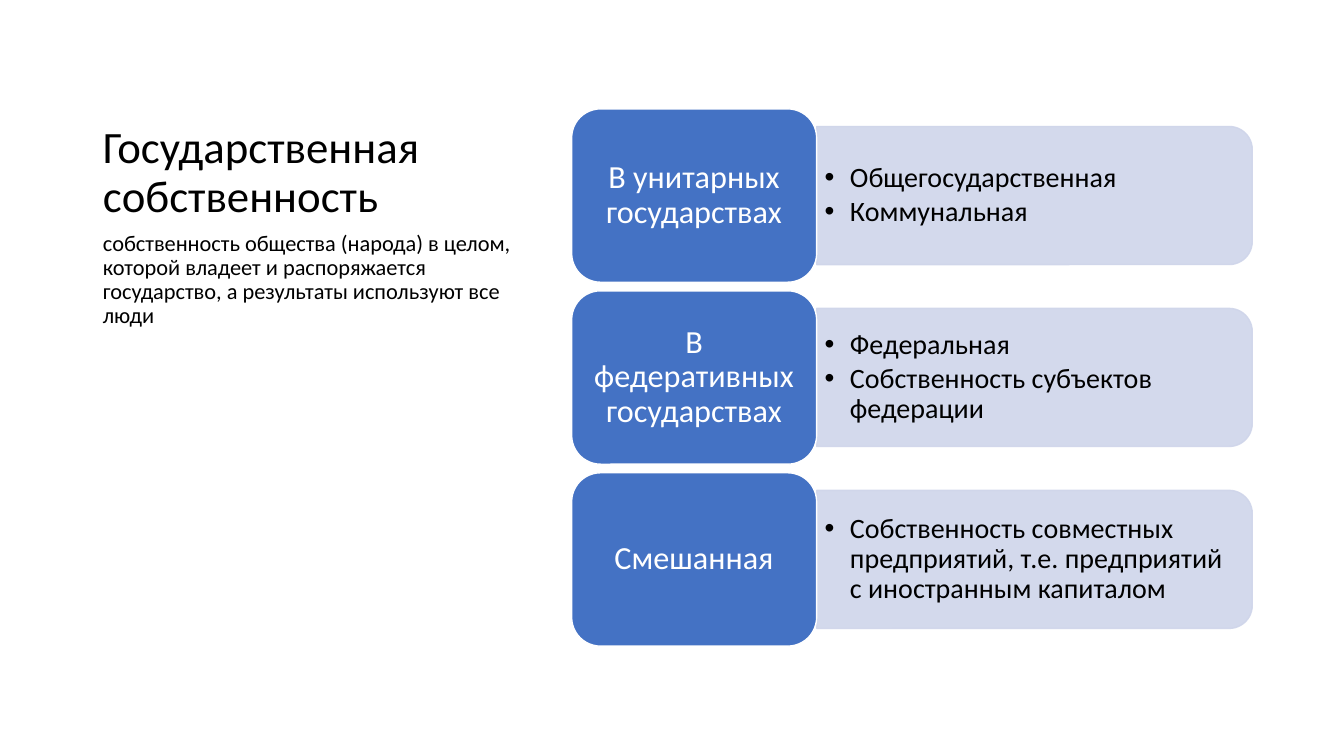
from lxml import etree
from pptx import Presentation
from pptx import util as u
from pptx.dml.color import RGBColor
from pptx.enum import shapes, text
from pptx.oxml.ns import qn

# Content
TITLE = "Государственная собственность"
BODY = ("собственность общества (народа) в целом, которой владеет и "
        "распоряжается государство, а результаты используют все люди")
ROWS = [
    ("В унитарных государствах", ["Общегосударственная", "Коммунальная"]),
    ("В федеративных государствах",
     ["Федеральная", "Собственность субъектов федерации"]),
    ("Смешанная",
     ["Собственность совместных предприятий, т.е. предприятий "
      "с иностранным капиталом"]),
]
FONT, BLUE, PALE, WHITE, BLACK = "Calibri", "4472C4", "CFD5EA", "FFFFFF", "000000"

# Grid, in inches
WIDE, HIGH = 13.33, 7.5
MARGIN, SIDE = 0.92, 4.3
LEFT, TOP, PITCH = 5.67, 1.08, 1.805
CARD_W, CARD_H = 2.43, 1.72
BAR_W, BAR_H = 4.32, 1.37
LIST_W, LIST_H = 4.25, 1.24


def color(code):
    return RGBColor.from_string(code)


def place(item, *box):
    item.left, item.top, item.width, item.height = map(u.Inches, box)


def write(frame, lines, size, ink, anchor, insets, align=text.PP_ALIGN.LEFT,
          before=0, after=0):
    frame.text = "\n".join(lines)
    frame.word_wrap = True
    frame.auto_size = text.MSO_AUTO_SIZE.NONE
    frame.vertical_anchor = anchor
    frame.margin_left = frame.margin_right = u.Inches(insets[0])
    frame.margin_top = frame.margin_bottom = u.Inches(insets[1])
    for para in frame.paragraphs:
        para.alignment = align
        para.line_spacing = 0.9
        para.space_before, para.space_after = u.Pt(before), u.Pt(after)
        for run in para.runs:
            font = run.font
            font.name, font.size, font.bold = FONT, u.Pt(size), False
            font.color.rgb = color(ink)


def bullet(para):
    props = para._p.get_or_add_pPr()
    props.set("marL", str(u.Inches(0.25)))
    props.set("indent", str(-u.Inches(0.25)))
    etree.SubElement(props, qn("a:buFont")).set("typeface", "Arial")
    etree.SubElement(props, qn("a:buChar")).set("char", "•")


def block(kind, box, fill, line, alpha=None):
    item = slide.shapes.add_shape(kind, *map(u.Inches, box))
    item.shadow.inherit = False
    item.fill.solid()
    item.fill.fore_color.rgb = color(fill)
    item.line.color.rgb = color(line)
    item.line.width = u.Pt(1)
    if alpha:
        for tone in item._element.spPr.iter(qn("a:srgbClr")):
            etree.SubElement(tone, qn("a:alpha")).set("val", str(alpha * 1000))
    return item


deck = Presentation()
deck.slide_width, deck.slide_height = u.Inches(WIDE), u.Inches(HIGH)
slide = deck.slides.add_slide(deck.slide_layouts[7])

# Title and definition
title, spare, body = slide.placeholders
spare.element.getparent().remove(spare.element)
place(title, MARGIN, 0.5, SIDE, 1.75)
write(title.text_frame, [TITLE], 32, BLACK, text.MSO_ANCHOR.BOTTOM, (0.1, 0.05))
place(body, MARGIN, 2.25, SIDE, 4.17)
write(body.text_frame, [BODY], 16, BLACK, text.MSO_ANCHOR.TOP, (0.1, 0.05),
      before=10)

# Rows: bar, list, card
edge = LEFT + CARD_W
for i, (label, points) in enumerate(ROWS):
    top = TOP + i * PITCH
    mid = top + CARD_H / 2

    # The bar is a tall shape turned on its side
    bar = block(shapes.MSO_SHAPE.ROUND_2_SAME_RECTANGLE,
                (edge + (BAR_W - BAR_H) / 2, mid - BAR_W / 2, BAR_H, BAR_W),
                PALE, PALE, 90)
    bar.rotation = 90

    notes = slide.shapes.add_textbox(
        *map(u.Inches, (edge, mid - LIST_H / 2, LIST_W, LIST_H)))
    write(notes.text_frame, points, 20, BLACK, text.MSO_ANCHOR.MIDDLE,
          (0.08, 0.04), after=3)
    for para in notes.text_frame.paragraphs:
        bullet(para)

    card = block(shapes.MSO_SHAPE.ROUNDED_RECTANGLE,
                 (LEFT, top, CARD_W, CARD_H), BLUE, WHITE)
    # Rounded corners add their own inset of about 0.08
    write(card.text_frame, [label], 23, WHITE, text.MSO_ANCHOR.MIDDLE,
          (0.1, 0.05), text.PP_ALIGN.CENTER)

deck.save("out.pptx")
